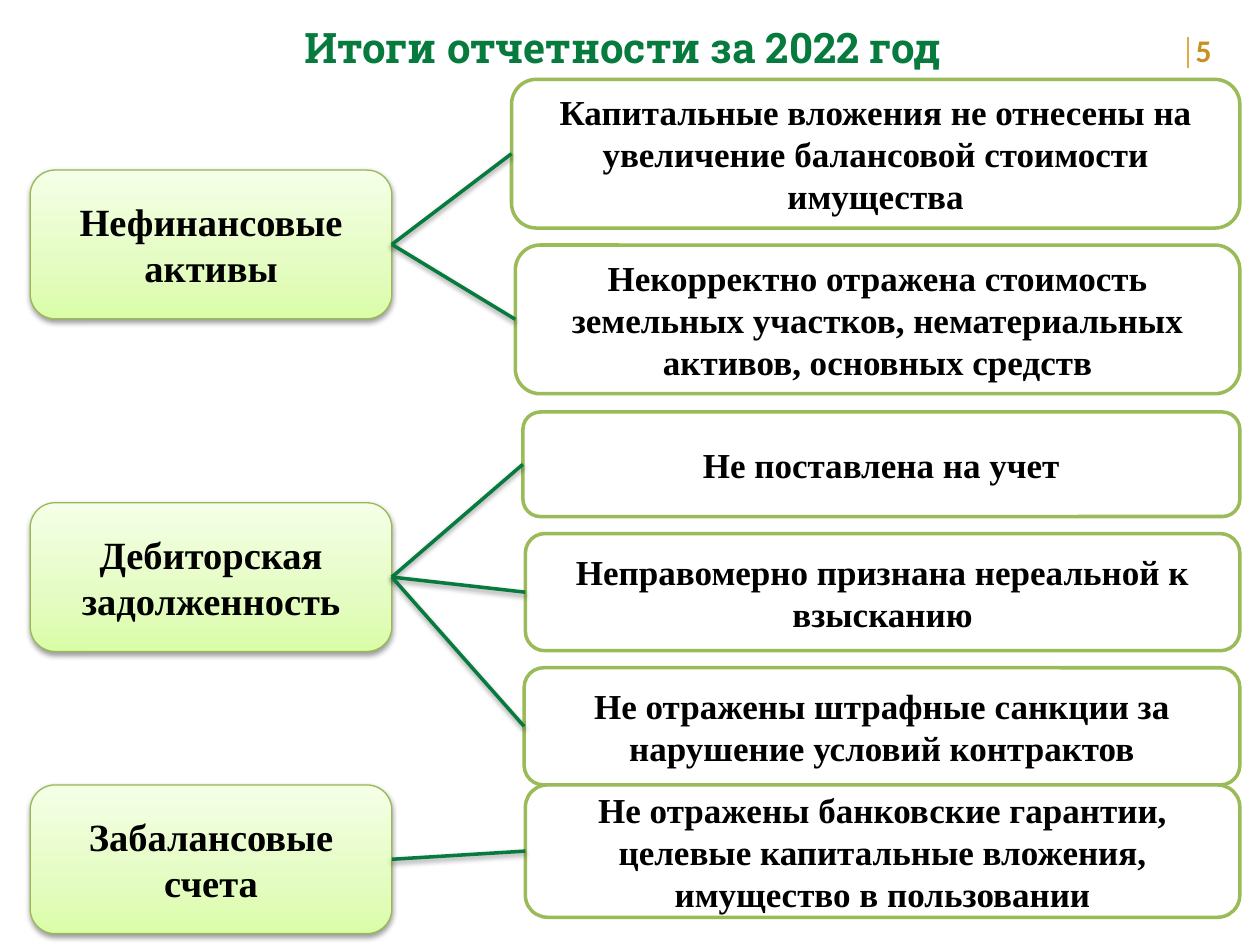
from copy import deepcopy

from lxml.etree import SubElement
from pptx import Presentation
from pptx.dml.color import RGBColor
from pptx.enum.shapes import MSO_CONNECTOR as LINK, MSO_SHAPE as SHAPE
from pptx.enum.text import MSO_ANCHOR as ANCHOR, PP_ALIGN as ALIGN
from pptx.oxml.ns import qn
from pptx.util import Inches, Pt

# The slide is a grid of 100 columns by 75 rows with square cells
COLUMNS, ROWS = 100, 75
CELL = Inches(0.1)
TOPIC_WIDTH, TOPIC_HEIGHT = 28.7, 11.8
DETAIL_GAP = 1.35
LEFT_SITE, RIGHT_SITE = 1, 3

COLORS = {
    "title": "077A3E", "link": "077A3E", "text": "000000", "shadow": "000000",
    "number": "C79023", "rule": "DEAA46", "topic_edge": "98B955",
    "detail_edge": "9BBB59", "detail": "FFFFFF",
}
TOPIC_STOPS = [(0, "DAFDA7"), (0.35, "E4FCC2"), (1, "F5FFE7")]

# Box of the group, row of its topic, topic, details (column, height, text)
GROUPS = [
    ((2.4, 6.3, 96, 24.9), 7.2, "Нефинансовые активы", [
        (38.2, 11.8, "Капитальные вложения не отнесены на увеличение "
                     "балансовой стоимости имущества"),
        (38.5, 11.8, "Некорректно отражена стоимость земельных участков, "
                     "нематериальных активов, основных средств")]),
    ((2.4, 32.7, 96, 29.6), 7.2, "Дебиторская задолженность", [
        (39.1, 8.3, "Не поставлена на учет"),
        (39.3, 9.3, "Неправомерно признана нереальной к взысканию"),
        (39.2, 9.3, "Не отражены штрафные санкции за нарушение условий "
                    "контрактов")]),
    ((2.4, 62.3, 96, 11.8), 0, "Забалансовые счета", [
        (39.3, 10.5, "Не отражены банковские гарантии, целевые капитальные "
                     "вложения, имущество в пользовании")]),
]


def cells(*counts):
    return [int(count * CELL) for count in counts]


def rgb(name):
    return RGBColor.from_string(COLORS[name])


def write(shape, text, font_name, size, color, align=ALIGN.CENTER):
    shape.text_frame.word_wrap = True
    paragraph = shape.text_frame.paragraphs[0]
    paragraph.text = text
    paragraph.alignment = align
    font = paragraph.font
    font.name, font.size, font.bold = font_name, Pt(size), True
    font.color.rgb = rgb(color)


def set_line(shape, color, width):
    shape.line.color.rgb = rgb(color)
    shape.line.width = Pt(width)


def set_effects(shape, shadowed):
    """Replace the theme's shadow by a soft one, or by none."""
    effects = SubElement(shape._element.spPr, qn("a:effectLst"))
    if shadowed:
        shadow = SubElement(effects, qn("a:outerShdw"), blurRad=str(Pt(3.1)),
                            dist=str(Pt(1.6)), dir="5400000", rotWithShape="0")
        color = SubElement(shadow, qn("a:srgbClr"), val=COLORS["shadow"])
        SubElement(color, qn("a:alpha"), val="38000")


def fill_topic(topic):
    topic.fill.gradient()
    topic.fill.gradient_angle = 90
    stop_list = topic._element.spPr.find(qn("a:gradFill")).find(qn("a:gsLst"))
    stop_list.append(deepcopy(stop_list[-1]))
    for stop, (position, color) in zip(topic.fill.gradient_stops, TOPIC_STOPS):
        stop.position = position
        stop.color.rgb = RGBColor.from_string(color)


def add_card(slide, box, text, size):
    card = slide.shapes.add_shape(SHAPE.ROUNDED_RECTANGLE, *cells(*box))
    card.text_frame.vertical_anchor = ANCHOR.MIDDLE
    write(card, text, "Times New Roman", size, "text")
    return card


def add_topic(slide, box, text):
    topic = add_card(slide, box, text, 22)
    fill_topic(topic)
    set_line(topic, "topic_edge", 0.75)
    set_effects(topic, True)
    return topic


def add_detail(slide, box, text):
    detail = add_card(slide, box, text, 20)
    detail.fill.solid()
    detail.fill.fore_color.rgb = rgb("detail")
    set_line(detail, "detail_edge", 2)
    set_effects(detail, False)
    return detail


def add_link(slide, topic, detail):
    link = slide.shapes.add_connector(LINK.STRAIGHT, 0, 0, 0, 0)
    link.begin_connect(topic, RIGHT_SITE)
    link.end_connect(detail, LEFT_SITE)
    set_line(link, "link", 2)
    set_effects(link, True)


def add_group(slide, box, topic_row, topic_text, details):
    left, top, width, _ = box
    topic = add_topic(
        slide, (left, top + topic_row, TOPIC_WIDTH, TOPIC_HEIGHT), topic_text)
    for column, height, text in details:
        detail = add_detail(
            slide, (left + column, top, width - column, height), text)
        add_link(slide, topic, detail)
        top += height + DETAIL_GAP


def add_title(slide, box):
    title = slide.shapes.add_textbox(*cells(*box))
    write(title, "Итоги отчетности за 2022 год", "Roboto Slab", 24, "title")


def add_page_number(slide, box):
    left, top, _, _ = box
    number = slide.shapes.add_textbox(*cells(*box))
    write(number, "5", "Calibri", 18, "number", ALIGN.LEFT)
    # Thin rule to the left of the number
    rule = slide.shapes.add_connector(
        LINK.STRAIGHT, *cells(left + 0.4, top + 0.9, left + 0.4, top + 3.4))
    set_line(rule, "rule", 1)
    set_effects(rule, False)


def main():
    deck = Presentation()
    deck.slide_width, deck.slide_height = cells(COLUMNS, ROWS)
    slide = deck.slides.add_slide(deck.slide_layouts[6])
    add_title(slide, (8.4, 1.2, 82.1, 5))
    add_page_number(slide, (93.9, 2, 6.1, 4))
    for group in GROUPS:
        add_group(slide, *group)
    deck.save("out.pptx")


if __name__ == "__main__":
    main()
